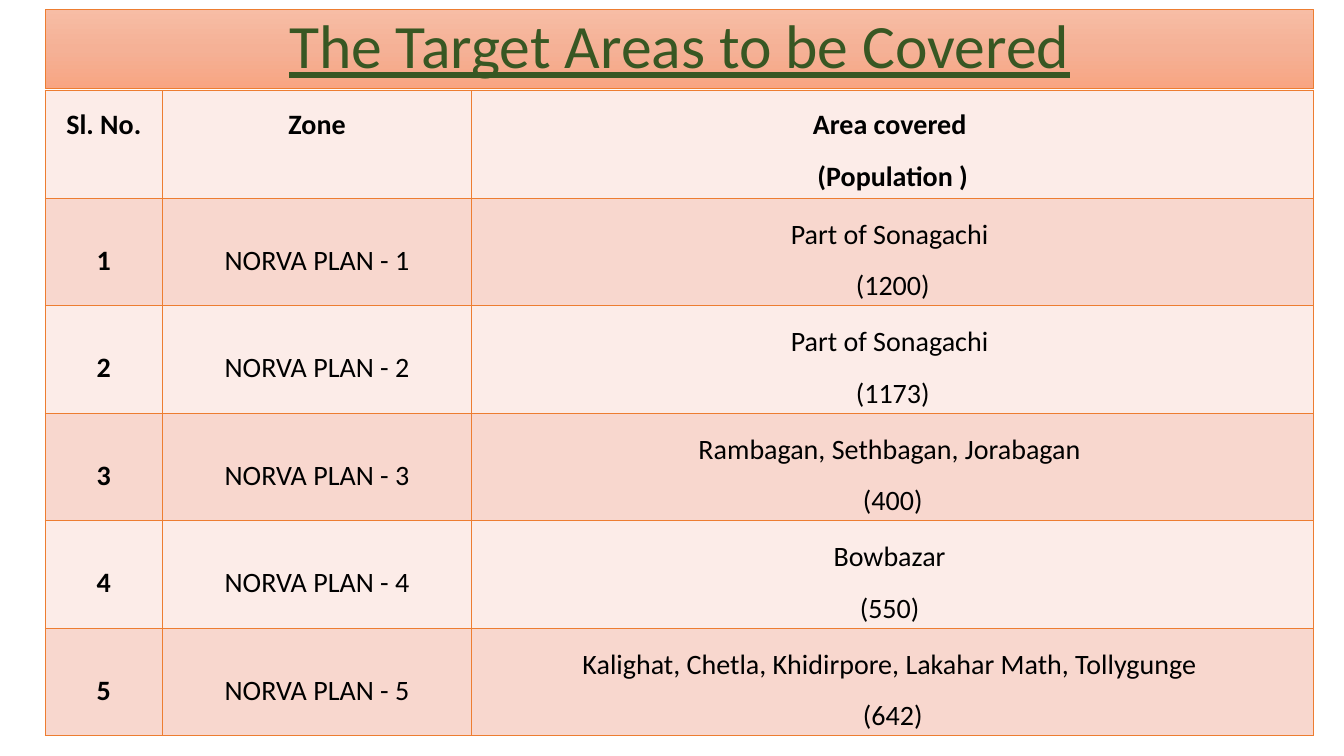
from copy import deepcopy
from dataclasses import dataclass

from lxml.etree import SubElement
from pptx import Presentation
from pptx.dml.color import RGBColor
from pptx.enum.text import MSO_ANCHOR, PP_ALIGN
from pptx.oxml.ns import qn
from pptx.util import Inches, Pt


@dataclass(frozen=True)
class Theme:
    font: str = "Calibri"
    title_size: int = 44
    table_size: int = 20
    title_color: str = "385723"
    text_color: str = "000000"
    accent: str = "ED7D31"
    banner: tuple = ("F7BDA5", "F5B196", "F8A582")
    bands: tuple = ("FCECE8", "F8D7CE")


THEME = Theme()

# Wording and column widths
TITLE = "The Target Areas to be Covered"
COLUMN_WIDTHS = (1.16, 3.07, 8.35)
HEADER = ("Sl. No.", "Zone", ("Area covered ", "(Population )"))
ZONE_NAME = "NORVA PLAN"
AREAS = (
    ("Part of Sonagachi ", "(1200)"),
    ("Part of Sonagachi ", "(1173)"),
    ("Rambagan, Sethbagan, Jorabagan ", "(400)"),
    ("Bowbazar ", "(550) "),
    ("Kalighat, Chetla, Khidirpore, Lakahar Math, Tollygunge ", "(642)"),
)


def add_span(para, text, size, color, bold=False, underline=False):
    span = para.add_run()
    span.text = text
    span.font.name = THEME.font
    span.font.size = Pt(size)
    span.font.color.rgb = RGBColor.from_string(color)
    span.font.bold = bold
    span.font.underline = underline


def fill_banner(box):
    fill = box.fill
    fill.gradient()
    fill.gradient_angle = 270  # counter-clockwise, so top to bottom
    fill.gradient_stops[0].color.rgb = RGBColor.from_string(THEME.banner[0])
    stop_list = box.element.spPr.find(qn("a:gradFill")).find(qn("a:gsLst"))
    stop_list.insert(1, deepcopy(stop_list[0]))  # middle stop
    for index, (stop, color) in enumerate(zip(fill.gradient_stops, THEME.banner)):
        stop.position = index / 2
        stop.color.rgb = RGBColor.from_string(color)


# Title banner
def place_title(page, left, top, width, height):
    box = page.shapes.title
    box.left, box.top, box.width, box.height = map(Inches, (left, top, width, height))
    fill_banner(box)
    box.line.color.rgb = RGBColor.from_string(THEME.accent)
    box.line.width = Pt(0.5)
    box.text_frame.vertical_anchor = MSO_ANCHOR.MIDDLE
    para = box.text_frame.paragraphs[0]
    para.alignment = PP_ALIGN.CENTER
    para.line_spacing = 0.9
    add_span(para, TITLE, THEME.title_size, THEME.title_color, underline=True)


def add_borders(cell):
    properties = cell._tc.get_or_add_tcPr()
    for index, side in enumerate(("lnL", "lnR", "lnT", "lnB")):
        line = SubElement(properties, qn(f"a:{side}"), w=str(Pt(1)))
        solid = SubElement(line, qn("a:solidFill"))
        SubElement(solid, qn("a:srgbClr"), val=THEME.accent)
        properties.insert(index, line)  # borders come before the fill


def write_cell(cell, content, band, bold, anchor):
    cell.fill.solid()
    cell.fill.fore_color.rgb = RGBColor.from_string(band)
    add_borders(cell)
    cell.margin_left = cell.margin_right = Inches(0.07)
    cell.margin_top = cell.margin_bottom = 0
    cell.vertical_anchor = anchor
    lines = (content,) if isinstance(content, str) else content
    frame = cell.text_frame
    for index, text in enumerate(lines):
        para = frame.add_paragraph() if index else frame.paragraphs[0]
        para.alignment = PP_ALIGN.CENTER
        para.line_spacing = 1.5
        add_span(para, text, THEME.table_size, THEME.text_color, bold)


# Table of zones and areas
def add_area_table(page, left, top, width, height):
    rows = [HEADER] + [
        (str(number), f"{ZONE_NAME} - {number}", area)
        for number, area in enumerate(AREAS, 1)
    ]
    box = page.shapes.add_table(
        len(rows), len(COLUMN_WIDTHS),
        Inches(left), Inches(top), Inches(width), Inches(height),
    )
    table = box.table
    for column, column_width in zip(table.columns, COLUMN_WIDTHS):
        column.width = Inches(column_width)
    for row_index, row in enumerate(rows):
        is_header = row_index == 0
        anchor = MSO_ANCHOR.TOP if is_header else MSO_ANCHOR.MIDDLE
        band = THEME.bands[row_index % 2]
        for column_index, content in enumerate(row):
            bold = is_header or column_index == 0
            write_cell(table.cell(row_index, column_index), content, band, bold, anchor)


def build_areas_page(deck):
    page = deck.slides.add_slide(deck.slide_layouts[5])  # title only
    left, width = 0.45, sum(COLUMN_WIDTHS)
    place_title(page, left, 0.09, width, 0.79)
    add_area_table(page, left, 0.9, width, 6.4)


def main():
    deck = Presentation()
    deck.slide_width, deck.slide_height = Inches(13.33), Inches(7.5)
    build_areas_page(deck)
    deck.save("out.pptx")


if __name__ == "__main__":
    main()
